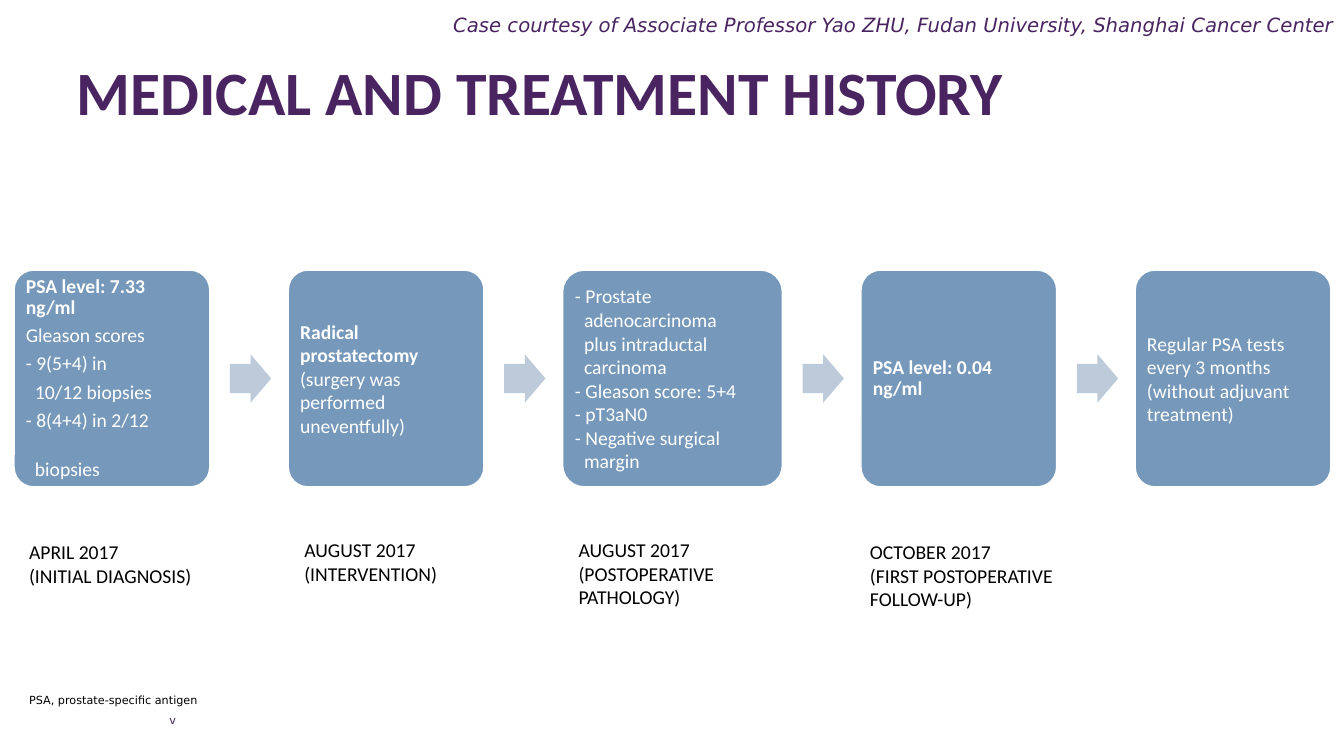
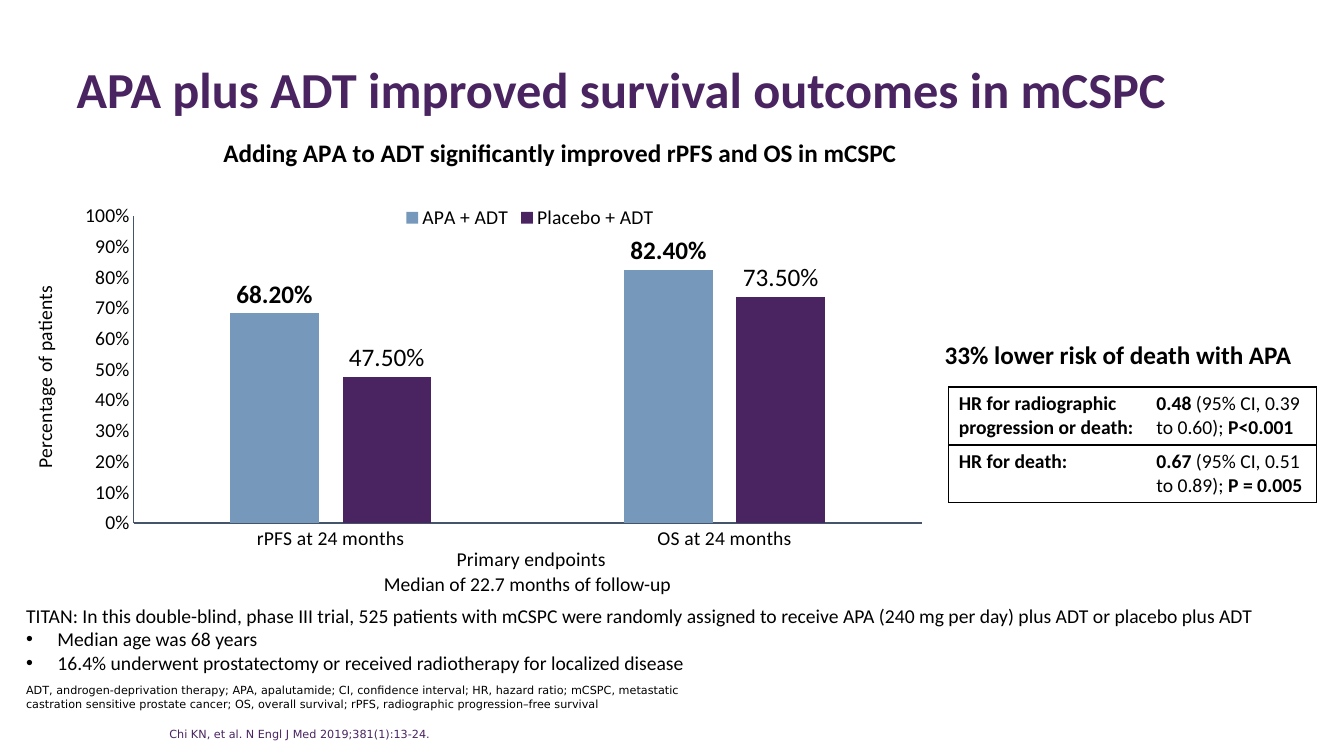
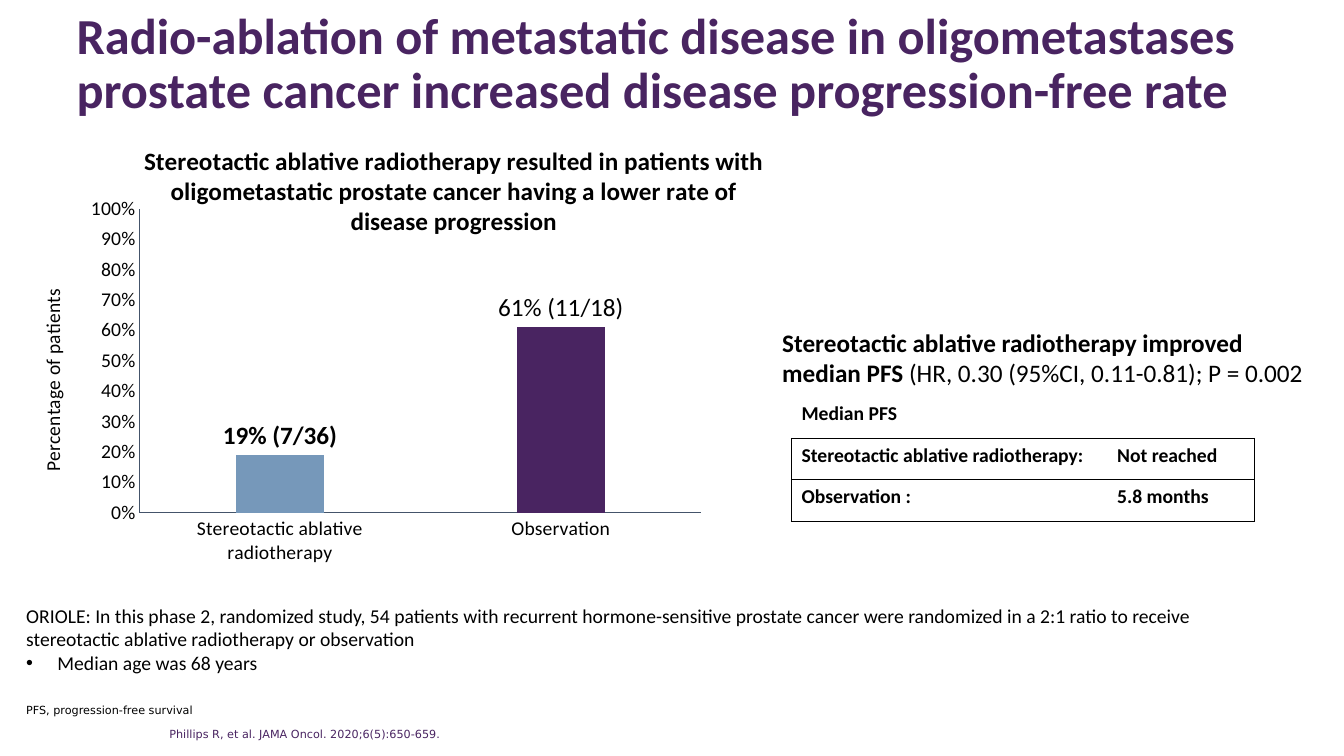
from dataclasses import dataclass
from typing import NamedTuple

from lxml.etree import SubElement
from pptx import Presentation
from pptx.chart.data import CategoryChartData
from pptx.dml.color import RGBColor
from pptx.enum.chart import XL_CHART_TYPE, XL_LABEL_POSITION, XL_LEGEND_POSITION, XL_TICK_MARK
from pptx.enum.shapes import MSO_SHAPE
from pptx.enum.text import MSO_ANCHOR, MSO_AUTO_SIZE, PP_ALIGN
from pptx.oxml.ns import qn
from pptx.util import Emu, Inches, Pt

UNIT = Inches(0.1)
HEX = {"ink": "000000", "plum": "492461", "steel": "7698BA", "mist": "BDCAD9",
       "slate": "44546A", "white": "FFFFFF"}
SANS, SMALL = "Calibri", "DejaVu Sans"


class Box(NamedTuple):
    col: float
    row: float
    wide: float
    tall: float


class Line(NamedTuple):
    text: str
    left: float = 0
    before: float = 0


class Card(NamedTuple):
    lines: list[Line]
    wide: float = 19.4
    tight: bool = False


class Label(NamedTuple):
    text: str
    col: float
    row: float


class Bars(NamedTuple):
    name: str
    vals: list[float]
    color: str
    bold: bool = False


class Cell(NamedTuple):
    text: str
    edges: str


@dataclass
class Plot:
    box: Box
    title: str
    spot: tuple[float, float]
    side: tuple[float, float]
    area: tuple[float, float, float, float]
    cats: list[str]
    bars: list[Bars]
    fmt: str


TITLE = Box(6.6, 4.2, 120.2, 10.5)
BODY = Box(1.6, 59.4, 124.4, 8.1)
CARDS = [
    Card([Line("*PSA level: 7.33 ng/ml*"), Line("Gleason scores"), Line("- 9(5+4) in"),
          Line("10/12 biopsies", 0.09), Line("- 8(4+4) in 2/12"),
          Line("biopsies", 0.09, 15)], tight=True),
    Card([Line("*Radical prostatectomy *(surgery was performed uneventfully)")]),
    Card([Line("- Prostate"), Line("adenocarcinoma", 0.09), Line("plus intraductal", 0.09),
          Line("carcinoma", 0.09), Line("- Gleason score: 5+4"), Line("- pT3aN0"),
          Line("- Negative surgical"), Line("margin", 0.09)], wide=21.8),
    Card([Line("*PSA level: 0.04 ng/ml*")], tight=True),
    Card([Line("Regular PSA tests every 3 months (without adjuvant treatment)")]),
]
LABELS = [
    Label("APRIL 2017\n(INITIAL DIAGNOSIS)", 1.9, 53.1),
    Label("AUGUST 2017\n(INTERVENTION)", 29.2, 52.9),
    Label("AUGUST 2017\n(POSTOPERATIVE PATHOLOGY)", 56.4, 52.9),
    Label("OCTOBER 2017\n(FIRST POSTOPERATIVE FOLLOW-UP)", 85.3, 53.1),
]


def rgb(name: str) -> RGBColor:
    return RGBColor.from_string(HEX[name])


def emu(box: Box) -> list[Emu]:
    return [Emu(round(part * UNIT)) for part in box]


def write(frame, text: str, size=14, font=SANS, color="ink", bold=False, italic=False,
          align=PP_ALIGN.LEFT, left=0.0, hang=0.0, mark=None, line=None, before=0, after=0):
    for row in text.split("\n"):
        para = frame.add_paragraph() if frame.text else frame.paragraphs[0]
        para.alignment = align
        para.space_before, para.space_after = Pt(before), Pt(after)
        if line:
            para.line_spacing = line
        props = para._p.get_or_add_pPr()
        props.set("marL", str(Inches(left)))
        props.set("indent", str(Inches(-hang)))
        if mark:
            SubElement(props, qn("a:buChar")).set("char", mark)
        else:
            SubElement(props, qn("a:buNone"))
        for spot, part in enumerate(row.split("*")):
            if part:
                run = para.add_run()
                run.text = part
                face = run.font
                face.size, face.name = Pt(size), font
                face.bold, face.italic = bold or spot % 2 == 1, italic
                face.color.rgb = rgb(color)


def setup(frame, anchor=MSO_ANCHOR.TOP, inset=None):
    frame.word_wrap = True
    frame.auto_size = MSO_AUTO_SIZE.NONE
    frame.vertical_anchor = anchor
    if inset is not None:
        frame.margin_left = frame.margin_right = Inches(inset)
        frame.margin_top = frame.margin_bottom = Inches(inset)
    return frame


def note(page, box: Box, text: str, anchor=MSO_ANCHOR.TOP, inset=None, **form):
    shape = page.shapes.add_textbox(*emu(box))
    write(setup(shape.text_frame, anchor, inset), text, **form)


def move(shape, box: Box):
    shape.left, shape.top, shape.width, shape.height = emu(box)


def start(deck, kind: int, title: str, size=36, row=TITLE.row):
    page = deck.slides.add_slide(deck.slide_layouts[kind])
    head = page.shapes.title
    move(head, TITLE._replace(row=row))
    write(setup(head.text_frame, MSO_ANCHOR.MIDDLE), title, size=size, color="plum",
          bold=True, line=0.9)
    return page


def study(page, lead: str, points: list[str]):
    body = page.placeholders[1]
    move(body, BODY)
    frame = setup(body.text_frame)
    write(frame, lead)
    for point in points:
        write(frame, point, left=0.31, hang=0.31, mark="•")


def small(page, box: Box, text: str):
    note(page, box, text, MSO_ANCHOR.MIDDLE, size=8, font=SMALL, line=1.1)


def cite(page, text: str, row=70.8):
    note(page, Box(16.8, row, 110.2, 4), text, MSO_ANCHOR.MIDDLE, 0,
         size=8, font=SMALL, color="plum")


def solid(page, kind, box: Box, color: str, turns: list[float]):
    shape = page.shapes.add_shape(kind, *emu(box))
    shape.shadow.inherit = False
    shape.fill.solid()
    shape.fill.fore_color.rgb = rgb(color)
    shape.line.fill.background()
    for spot, turn in enumerate(turns):
        shape.adjustments[spot] = turn
    return shape


def flow(page, cards: list[Card]):
    col, row, tall, gap = 1.4, 26.8, 21.5, 7.8
    for spot, card in enumerate(cards):
        if spot:
            solid(page, MSO_SHAPE.RIGHT_ARROW, Box(col - 5.8, row + (tall - 4.8) / 2, 4.1, 4.8),
                  "mist", [0.6, 0.5])
        shape = solid(page, MSO_SHAPE.ROUNDED_RECTANGLE, Box(col, row, card.wide, tall),
                      "steel", [0.1])
        shape.line.color.rgb = rgb("white")
        shape.line.width = Pt(1)
        frame = setup(shape.text_frame, MSO_ANCHOR.MIDDLE, 0.06)
        for line in card.lines:
            write(frame, line.text, color="white", left=line.left, before=line.before,
                  line=0.9 if card.tight else None, after=5 if card.tight else 0)
        col += card.wide + gap


def lay(item, x: float, y: float, w=None, h=None):
    old = item.find(qn("c:layout"))
    if old is not None:
        item.remove(old)
    lead = sum(kid.tag in (qn("c:tx"), qn("c:legendPos")) for kid in item)
    node = SubElement(item, qn("c:layout"))
    item.insert(lead, node)
    form = SubElement(node, qn("c:manualLayout"))
    pairs = [("xMode", "edge"), ("yMode", "edge"), ("x", x), ("y", y)]
    if w:
        pairs = [("layoutTarget", "inner"), *pairs, ("w", w), ("h", h)]
    for name, val in pairs:
        SubElement(form, qn("c:" + name)).set("val", str(val))


def name(axis, text: str, spot: tuple[float, float]):
    axis.has_title = True
    write(axis.axis_title.text_frame, text, align=PP_ALIGN.CENTER)
    lay(axis.axis_title.element, *spot)


def style(font, size=14, bold=False):
    font.size, font.name, font.bold = Pt(size), SANS, bold
    font.color.rgb = rgb("ink")


def draw(page, plot: Plot):
    data = CategoryChartData()
    data.categories = plot.cats
    for bar in plot.bars:
        data.add_series(bar.name, bar.vals)
    chart = page.shapes.add_chart(XL_CHART_TYPE.COLUMN_CLUSTERED, *emu(plot.box), data).chart
    style(chart.font)
    chart.has_legend = False
    chart.has_title = True
    write(chart.chart_title.text_frame, plot.title, size=18, bold=True, align=PP_ALIGN.CENTER)
    lay(chart.chart_title.element, *plot.spot)
    lay(chart.element.find(".//" + qn("c:plotArea")), *plot.area)
    for axis in (chart.category_axis, chart.value_axis):
        axis.has_major_gridlines = False
        axis.major_tick_mark = axis.minor_tick_mark = XL_TICK_MARK.NONE
        style(axis.tick_labels.font)
        axis.format.line.color.rgb = rgb("slate")
        axis.format.line.width = Pt(0.75)
    scale = chart.value_axis
    scale.minimum_scale, scale.maximum_scale, scale.major_unit = 0, 1, 0.1
    scale.tick_labels.number_format = "0%"
    scale.tick_labels.number_format_is_linked = False
    name(scale, "Percentage of patients", plot.side)
    group = chart.plots[0]
    group.gap_width, group.overlap, group.vary_by_categories = 219, -27, False
    for bar, series in zip(plot.bars, group.series):
        series.format.fill.solid()
        series.format.fill.fore_color.rgb = rgb(bar.color)
        tags = series.data_labels
        tags.show_value = True
        tags.number_format, tags.number_format_is_linked = plot.fmt, False
        tags.position = XL_LABEL_POSITION.OUTSIDE_END
        style(tags.font, 18, bar.bold)
    return chart


def edge(cell, edges: str):
    props = cell._tc.get_or_add_tcPr()
    for side in "LRTB":
        line = SubElement(props, qn("a:ln" + side))
        line.set("w", str(Pt(1)))
        if side in edges:
            fill = SubElement(line, qn("a:solidFill"))
            SubElement(fill, qn("a:srgbClr")).set("val", HEX["ink"])
        else:
            SubElement(line, qn("a:noFill"))
    cell.fill.background()


def grid(page, col: float, row: float, wides: list[float], tall: float,
         rows: list[list[Cell]]):
    box = Box(col, row, sum(wides), tall * len(rows))
    table = page.shapes.add_table(len(rows), len(wides), *emu(box)).table
    table.first_row = table.horz_banding = False
    for slot, wide in zip(table.columns, wides):
        slot.width = Emu(round(wide * UNIT))
    for r, cells in enumerate(rows):
        for c, item in enumerate(cells):
            cell = table.cell(r, c)
            edge(cell, item.edges)
            if item.text:
                write(cell.text_frame, item.text)
    return table


def history(deck):
    page = start(deck, 5, "MEDICAL AND TREATMENT HISTORY", 44)
    flow(page, CARDS)
    for label in LABELS:
        note(page, Box(label.col, label.row, 22.3, 8.1), label.text)
    note(page, Box(35.4, 0.9, 97.9, 3),
         "Case courtesy of Associate Professor Yao ZHU, Fudan University, Shanghai Cancer Center",
         MSO_ANCHOR.MIDDLE, font=SMALL, color="plum", italic=True, align=PP_ALIGN.RIGHT)
    small(page, Box(1.9, 67.9, 38.4, 3), "PSA, prostate-specific antigen")
    cite(page, "v", 69.4)


def titan(deck):
    page = start(deck, 1, "APA plus ADT improved survival outcomes in mCSPC", row=3.9)
    chart = draw(page, Plot(
        Box(2.7, 12.5, 105.6, 46.9),
        "Adding APA to ADT significantly improved rPFS and OS in mCSPC",
        (0.18, 0.01), (0, 0.33), (0.1, 0.19, 0.74, 0.65),
        ["rPFS at 24 months", "OS at 24 months"],
        [Bars("APA + ADT", [0.682, 0.824], "steel", True),
         Bars("Placebo + ADT", [0.475, 0.735], "plum")], "0.00%"))
    name(chart.category_axis, "Primary endpoints", (0.4, 0.88))
    chart.has_legend = True
    chart.legend.position = XL_LEGEND_POSITION.TOP
    chart.legend.include_in_layout = False
    style(chart.legend.font)
    lay(chart.element.find(".//" + qn("c:legend")), 0.35, 0.16)
    note(page, Box(37.1, 56.2, 40.4, 3.4), "Median of 22.7 months of follow-up")
    study(page, "TITAN: In this double-blind, phase III trial, 525 patients with mCSPC were "
          "randomly assigned to receive APA (240 mg per day) plus ADT or placebo plus ADT",
          ["Median age was 68 years",
           "16.4% underwent prostatectomy or received radiotherapy for localized disease"])
    note(page, Box(92.7, 33.2, 37.9, 4), "33% lower risk of death with APA", size=18, bold=True)
    grid(page, 94.1, 38.4, [19.6, 16.9], 5.7, [
        [Cell("*HR for radiographic progression or death:*", "LTB"),
         Cell("*0.48* (95% CI, 0.39 to 0.60); *P<0.001*", "RTB")],
        [Cell("*HR for death:*", "LTB"),
         Cell("*0.67* (95% CI, 0.51 to 0.89); *P = 0.005*", "RTB")]])
    small(page, Box(1.6, 67.1, 68.8, 4),
          "ADT, androgen-deprivation therapy; APA, apalutamide; CI, confidence interval; HR, "
          "hazard ratio; mCSPC, metastatic castration sensitive prostate cancer; OS, overall "
          "survival; rPFS, radiographic progression–free survival")
    cite(page, "Chi KN, et al. N Engl J Med 2019;381(1):13-24.")


def oriole(deck):
    page = start(deck, 1, "Radio-ablation of metastatic disease in oligometastases prostate "
                 "cancer increased disease progression-free rate", row=1.2)
    chart = draw(page, Plot(
        Box(2.7, 12.5, 79.6, 43.5),
        "Stereotactic ablative radiotherapy resulted in patients with oligometastatic "
        "prostate cancer having a lower rate of disease progression",
        (0.14, 0.03), (0.01, 0.37), (0.14, 0.19, 0.7, 0.7),
        ["Stereotactic ablative radiotherapy", "Observation"],
        [Bars("Series 1", [0.19, 0.61], "steel")], "0%"))
    points = chart.plots[0].series[0].points
    points[1].format.fill.solid()
    points[1].format.fill.fore_color.rgb = rgb("plum")
    for spot, text in enumerate(["*19% (7/36)*", "61% (11/18)"]):
        tag = points[spot].data_label
        write(tag.text_frame, text, size=18, align=PP_ALIGN.CENTER)
        tag.position = XL_LABEL_POSITION.OUTSIDE_END
    study(page, "ORIOLE: In this phase 2, randomized study, 54 patients with recurrent "
          "hormone-sensitive prostate cancer were randomized in a 2:1 ratio to receive "
          "stereotactic ablative radiotherapy or observation", ["Median age was 68 years"])
    note(page, Box(76.6, 32, 54.1, 7.1),
         "*Stereotactic ablative radiotherapy improved median PFS *"
         "(HR, 0.30 (95%CI, 0.11-0.81); P = 0.002", size=18)
    table = grid(page, 78.5, 39.4, [31.3, 14.6], 4.1, [
        [Cell("*Median PFS*", "B"), Cell("", "B")],
        [Cell("*Stereotactic ablative radiotherapy:*", "LTB"), Cell("*Not reached*", "RTB")],
        [Cell("*Observation :*", "LTB"), Cell("*5.8 months*", "RTB")]])
    table.cell(0, 0).merge(table.cell(0, 1))
    small(page, Box(1.6, 68.9, 68.8, 3), "PFS, progression-free survival")
    cite(page, "Phillips R, et al. JAMA Oncol. 2020;6(5):650-659.")


def main():
    deck = Presentation()
    deck.slide_width, deck.slide_height = Inches(13.33), Inches(7.5)
    for build in (history, titan, oriole):
        build(deck)
    deck.save("out.pptx")


if __name__ == "__main__":
    main()
